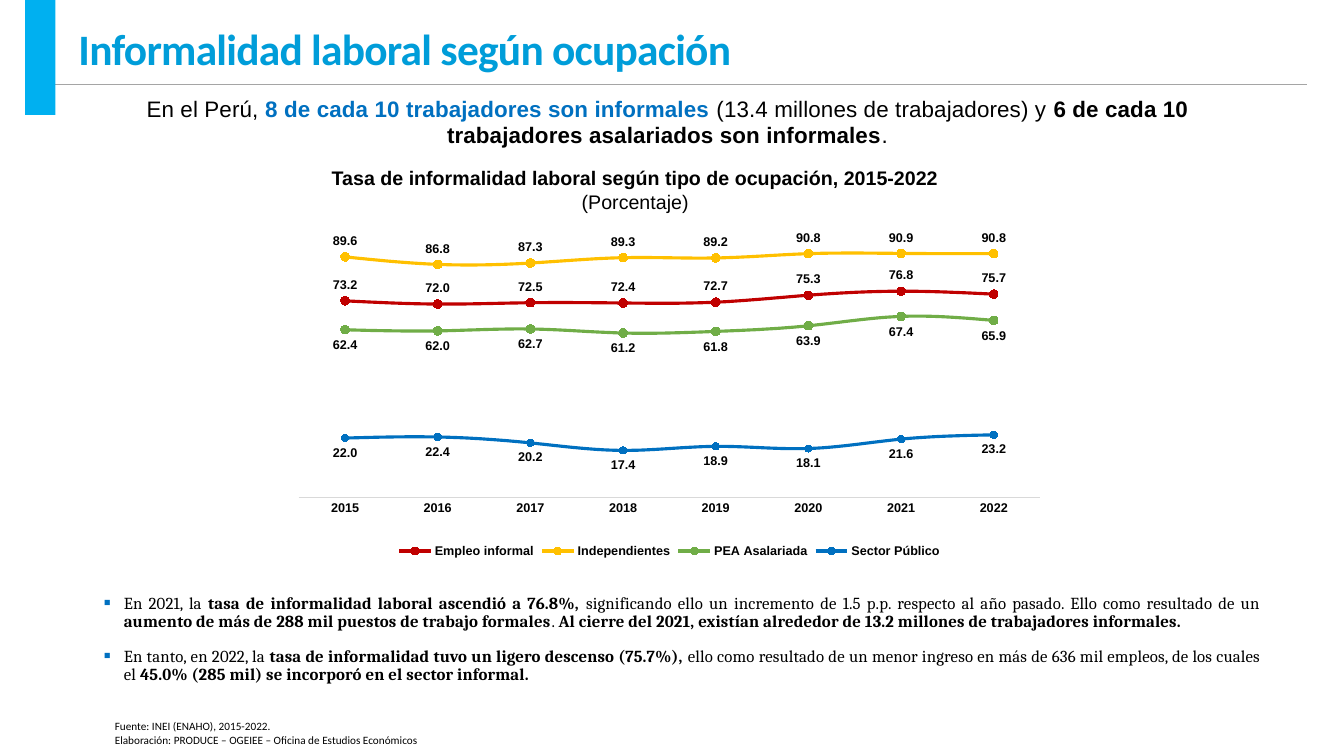
from lxml import etree
from pptx import Presentation
from pptx.chart.data import CategoryChartData
from pptx.dml.color import RGBColor
from pptx.enum.chart import (XL_CHART_TYPE, XL_LABEL_POSITION as LABEL, XL_LEGEND_POSITION,
                             XL_MARKER_STYLE, XL_TICK_MARK)
from pptx.enum.shapes import MSO_CONNECTOR, MSO_SHAPE
from pptx.enum.text import PP_ALIGN
from pptx.oxml import parse_xml
from pptx.oxml.ns import nsdecls, qn
from pptx.util import Pt

PX = 9144  # 100 px to the inch

BLACK = RGBColor(0x00, 0x00, 0x00)
CYAN = RGBColor(0x00, 0xB0, 0xF0)
TITLE_BLUE = RGBColor(0x00, 0x9D, 0xD9)
BLUE = RGBColor(0x00, 0x70, 0xC0)
RED = RGBColor(0xC0, 0x00, 0x00)
GOLD = RGBColor(0xFF, 0xC0, 0x00)
GREEN = RGBColor(0x70, 0xAD, 0x47)
RULE_GREY = RGBColor(0xA5, 0xA5, 0xA5)
AXIS_GREY = RGBColor(0xD9, 0xD9, 0xD9)

YEARS = [str(year) for year in range(2015, 2023)]
# name, colour, marker size, label position, rates
OCCUPATIONS = [
    ("Empleo informal", RED, 6, LABEL.ABOVE, (73.2, 72.0, 72.5, 72.4, 72.7, 75.3, 76.8, 75.7)),
    ("Independientes", GOLD, 6, LABEL.ABOVE, (89.6, 86.8, 87.3, 89.3, 89.2, 90.8, 90.9, 90.8)),
    ("PEA Asalariada", GREEN, 6, LABEL.BELOW, (62.4, 62.0, 62.7, 61.2, 61.8, 63.9, 67.4, 65.9)),
    ("Sector Público", BLUE, 5, LABEL.BELOW, (22.0, 22.4, 20.2, 17.4, 18.9, 18.1, 21.6, 23.2)),
]

HEADLINE = [[
    ("En el Perú, ", False),
    ("8 de cada 10 trabajadores son informales ", True, BLUE),
    ("(13.4 millones de trabajadores) y ", False),
    ("6 de cada 10 trabajadores asalariados son informales", True),
    (".", False),
]]
CHART_TITLE = [
    [("Tasa de informalidad laboral según tipo de ocupación, 2015-2022", True)],
    [("(Porcentaje)", False)],
]
FINDINGS = [
    [("En 2021, la ", False),
     ("tasa de informalidad laboral ascendió a 76.8%, ", True),
     ("significando ello un incremento de 1.5 p.p. respecto al año pasado. "
      "Ello como resultado de un ", False),
     ("aumento de más de 288 mil puestos de trabajo formales", True),
     (". ", False),
     ("Al cierre del 2021, existían alrededor de 13.2 millones de trabajadores informales.", True)],
    [("En tanto, en 2022, la ", False),
     ("tasa de informalidad tuvo un ligero descenso (75.7%), ", True),
     ("ello como resultado de un menor ingreso en más de 636 mil empleos, "
      "de los cuales el ", False),
     ("45.0% (285 mil) se incorporó en el sector informal.", True)],
]
SOURCES = [
    [("Fuente: INEI (ENAHO), 2015-2022.", False)],
    [("Elaboración: PRODUCE – OGEIEE – Oficina de Estudios Económicos", False)],
]


def emu(*lengths):
    return [length * PX for length in lengths]


def add_bullet(paragraph, indent=20):
    properties = paragraph._p.get_or_add_pPr()
    properties.set("marL", str(indent * PX))
    properties.set("indent", str(-indent * PX))
    colour = etree.SubElement(properties, qn("a:buClr"))
    etree.SubElement(colour, qn("a:srgbClr"), val=str(BLUE))
    etree.SubElement(properties, qn("a:buSzPct"), val="125000")
    etree.SubElement(properties, qn("a:buFont"), typeface="Arial")
    etree.SubElement(properties, qn("a:buChar"), char="▪")


def add_text(slide, box, paragraphs, size, font="Arial", color=BLACK, align=PP_ALIGN.LEFT,
             tracking=0, line=None, before=0, after=0, bullet=False):
    """Each paragraph is a list of (text, bold[, colour]); tracking is in 1/100 pt."""
    frame = slide.shapes.add_textbox(*emu(*box)).text_frame
    frame.word_wrap = True
    for index, pieces in enumerate(paragraphs):
        paragraph = frame.add_paragraph() if index else frame.paragraphs[0]
        paragraph.alignment = align
        paragraph.line_spacing = line
        paragraph.space_before, paragraph.space_after = Pt(before), Pt(after)
        if bullet:
            add_bullet(paragraph)
        for text, bold, *own_color in pieces:
            run = paragraph.add_run()
            run.text = text
            run.font.name, run.font.size, run.font.bold = font, Pt(size), bold
            run.font.color.rgb = own_color[0] if own_color else color
            if tracking:
                run._r.get_or_add_rPr().set("spc", str(tracking))


def add_header(slide, box):
    left, top, width, height = box
    rule_y = top + 84
    rule = slide.shapes.add_connector(MSO_CONNECTOR.STRAIGHT,
                                      *emu(left + 7, rule_y, left + width, rule_y))
    rule.line.color.rgb, rule.line.width = RULE_GREY, Pt(0.5)
    etree.SubElement(rule._element.spPr, qn("a:effectLst"))
    tab = slide.shapes.add_shape(MSO_SHAPE.RECTANGLE, *emu(left, top, 30, height))
    tab.shadow.inherit = False
    tab.fill.solid()
    tab.fill.fore_color.rgb = CYAN
    tab.line.fill.background()
    add_text(slide, (left + 43, top + 17, 1178, 62),
             [[("Informalidad laboral según ocupación", True)]],
             31, font="Calibri", color=TITLE_BLUE, tracking=-50)


def place_plot(chart, x, y, w, h):
    """Fixes the inner plot area, in fractions of the chart."""
    sizes = "".join(f'<c:{tag} val="{value}"/>' for tag, value in zip("xywh", (x, y, w, h)))
    layout = parse_xml(
        f'<c:layout {nsdecls("c")}><c:manualLayout><c:layoutTarget val="inner"/>'
        f'<c:xMode val="edge"/><c:yMode val="edge"/>{sizes}</c:manualLayout></c:layout>')
    plot_area = chart._chartSpace.chart.plotArea
    for automatic in plot_area.findall(qn("c:layout")):
        plot_area.remove(automatic)
    plot_area.insert(0, layout)


def style_series(series, color, marker_size, label_position):
    series.smooth = True
    series.format.line.color.rgb, series.format.line.width = color, Pt(2.25)
    marker = series.marker
    marker.style, marker.size = XL_MARKER_STYLE.CIRCLE, marker_size
    marker.format.fill.solid()
    marker.format.fill.fore_color.rgb = color
    marker.format.line.color.rgb = color
    labels = series.data_labels
    labels.show_value, labels.position = True, label_position
    labels.number_format, labels.number_format_is_linked = "0.0", False


def add_rates_chart(slide, box):
    data = CategoryChartData(number_format="0.0")
    data.categories = YEARS
    for name, *_, rates in OCCUPATIONS:
        data.add_series(name, rates)
    chart = slide.shapes.add_chart(XL_CHART_TYPE.LINE_MARKERS, *emu(*box), data).chart
    chart.has_title = False
    chart.font.name, chart.font.size, chart.font.bold = "Arial", Pt(9), True
    chart.font.color.rgb = BLACK
    chart.plots[0].vary_by_categories = False
    for series, (_, color, marker_size, label_position, _) in zip(chart.series, OCCUPATIONS):
        style_series(series, color, marker_size, label_position)

    rates_axis, years_axis = chart.value_axis, chart.category_axis
    rates_axis.minimum_scale, rates_axis.maximum_scale = 0, 100
    rates_axis.has_major_gridlines = False
    rates_axis.visible = False
    years_axis.major_tick_mark = XL_TICK_MARK.NONE
    years_axis.format.line.color.rgb, years_axis.format.line.width = AXIS_GREY, Pt(0.75)

    chart.has_legend = True
    chart.legend.position = XL_LEGEND_POSITION.BOTTOM
    chart.legend.include_in_layout = False
    place_plot(chart, 0.02, 0.03, 0.96, 0.78)


def build_informality_slide(slide):
    add_header(slide, (25, 0, 1271, 114))
    add_text(slide, (78, 89, 1168, 64), HEADLINE, 16, align=PP_ALIGN.CENTER, tracking=10, after=2)
    add_text(slide, (229, 160, 802, 57), CHART_TITLE, 14, align=PP_ALIGN.CENTER)
    add_rates_chart(slide, (281, 217, 766, 341))
    add_text(slide, (93, 585, 1168, 119), FINDINGS, 12, font="Cambria", align=PP_ALIGN.JUSTIFY,
             tracking=10, line=0.9, before=10, after=2, bullet=True)
    add_text(slide, (104, 709, 495, 37), SOURCES, 8, font="Calibri")


def main():
    deck = Presentation()
    deck.slide_width, deck.slide_height = emu(1333, 750)
    build_informality_slide(deck.slides.add_slide(deck.slide_layouts[6]))
    deck.save("out.pptx")


if __name__ == "__main__":
    main()
